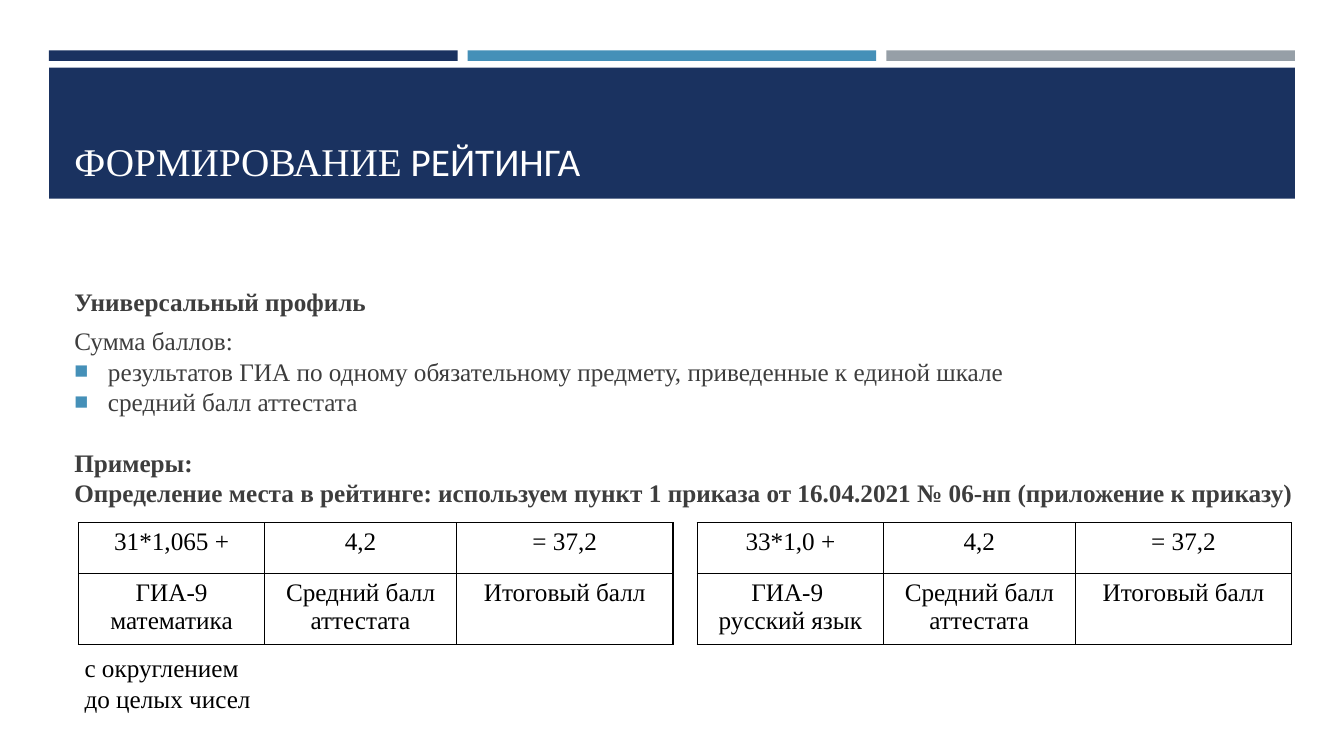
import pptx
import pptx.util
import pptx.dml.color
import pptx.enum.shapes
import pptx.enum.text
import lxml.etree

Pt = pptx.util.Pt
RGB = pptx.dml.color.RGBColor
Align = pptx.enum.text.PP_ALIGN
Anchor = pptx.enum.text.MSO_ANCHOR

NAVY = RGB(0x1A, 0x32, 0x60)
BLUE = RGB(0x45, 0x90, 0xB8)
GRAY = RGB(0x96, 0x9F, 0xA7)
DARK = RGB(0x3D, 0x3D, 0x3D)
BLACK = RGB(0, 0, 0)
WHITE = RGB(0xFF, 0xFF, 0xFF)
SERIF = "Times New Roman"


def add_node(parent, tag, **attrs):
    node = lxml.etree.SubElement(parent, pptx.oxml.ns.qn(tag))
    for key, value in attrs.items():
        node.set(key, str(value))
    return node


def write(para, text, size=18, font=SERIF, color=BLACK, bold=False,
          align=Align.LEFT, line=None, before=0, after=0):
    """Add a formatted run to a paragraph and set the paragraph's layout."""
    run = para.add_run()
    run.text = text
    run.font.size = Pt(size)
    run.font.name = font
    run.font.color.rgb = color
    run.font.bold = bold
    para.alignment = align
    para.space_before, para.space_after = Pt(before), Pt(after)
    if line:
        para.line_spacing = Pt(line)


def set_bullet(para):
    props = para._p.get_or_add_pPr()
    props.set("marL", str(Pt(24)))
    props.set("indent", str(-Pt(24)))
    add_node(add_node(props, "a:buClr"), "a:srgbClr", val=BLUE)
    add_node(props, "a:buSzPct", val=92000)
    add_node(props, "a:buFont", typeface="Arial")
    add_node(props, "a:buChar", char="■")


def add_block(slide, x, y, w, h, fill):
    block = slide.shapes.add_shape(
        pptx.enum.shapes.MSO_SHAPE.RECTANGLE, Pt(x), Pt(y), Pt(w), Pt(h))
    block.shadow.inherit = False
    block.fill.solid()
    block.fill.fore_color.rgb = fill
    block.line.fill.background()


def add_header(slide, x, y, w):
    gap = 7.2
    bar = (w - 2 * gap) / 3
    for i, fill in enumerate((NAVY, BLUE, GRAY)):
        add_block(slide, x + i * (bar + gap), y, bar, 7.5, fill)
    add_block(slide, x, y + 12.3, w, 93.6, NAVY)

    title = slide.shapes.title
    title.left, title.top = Pt(x + 11), Pt(y + 19.4)
    title.width, title.height = Pt(w - 22), Pt(80)
    frame = title.text_frame
    frame.auto_size = pptx.enum.text.MSO_AUTO_SIZE.NONE
    frame.vertical_anchor = Anchor.BOTTOM
    para = frame.paragraphs[0]
    write(para, "ФОРМИРОВАНИЕ", size=28, color=WHITE)
    write(para, " РЕЙТИНГА", size=28, font="Calibri", color=WHITE)
    # Bring the title in front of the band
    title.element.getparent().append(title.element)


def add_frame(slide, x, y, w, h):
    box = slide.shapes.add_textbox(Pt(x), Pt(y), Pt(w), Pt(h))
    box.text_frame.word_wrap = True
    return box.text_frame


def add_body(slide, x, y, w, h):
    line = 21.7
    frame = add_frame(slide, x, y, w, h)
    frame.vertical_anchor = Anchor.MIDDLE
    frame.margin_bottom = Pt(3.6 + line)
    rows = [
        ("Универсальный профиль", False, dict(bold=True, after=6)),
        ("Сумма баллов:", False, {}),
        ("результатов ГИА по одному обязательному предмету, "
         "приведенные к единой шкале", True, {}),
        ("средний балл аттестата", True, {}),
        ("Примеры:", False, dict(bold=True, before=line)),
        ("Определение места в рейтинге: используем пункт 1 приказа "
         "от 16.04.2021 № 06-нп (приложение к приказу)", False,
         dict(bold=True)),
    ]
    for i, (text, listed, style) in enumerate(rows):
        para = frame.add_paragraph() if i else frame.paragraphs[0]
        write(para, text, color=DARK, line=line, **style)
        if listed:
            set_bullet(para)


def set_border(cell):
    props = cell._tc.get_or_add_tcPr()
    for i, side in enumerate(("a:lnL", "a:lnR", "a:lnT", "a:lnB")):
        edge = add_node(props, side, w=Pt(1))
        add_node(add_node(edge, "a:solidFill"), "a:srgbClr", val=BLACK)
        props.insert(i, edge)


def add_score(slide, x, y, rows):
    """Draw one worked example: values over their labels."""
    widths, heights = (133.2, 136.8, 154.8), (36.4, 47)
    table = slide.shapes.add_table(
        2, 3, Pt(x), Pt(y), Pt(sum(widths)), Pt(sum(heights))).table
    table.first_row = table.horz_banding = False
    for col, width in zip(table.columns, widths):
        col.width = Pt(width)
    for row, height, texts in zip(table.rows, heights, rows):
        row.height = Pt(height)
        for cell, text in zip(row.cells, texts):
            cell.fill.background()
            set_border(cell)
            for i, part in enumerate(text.split("\n")):
                frame = cell.text_frame
                para = frame.add_paragraph() if i else frame.paragraphs[0]
                write(para, part, align=Align.CENTER)


def add_note(slide, x, y, w, h):
    frame = add_frame(slide, x, y, w, h)
    write(frame.paragraphs[0], "с округлением до целых чисел", line=22)


def main():
    deck = pptx.Presentation()
    deck.slide_width, deck.slide_height = Pt(960), Pt(540)
    slide = deck.slides.add_slide(deck.slide_layouts[5])
    add_header(slide, 35, 36, 890)
    add_body(slide, 46, 164.2, 890, 260.6)
    scores = [("31*1,065 +", "ГИА-9 математика"),
              ("33*1,0 +", "ГИА-9 \nрусский язык")]
    for i, (value, label) in enumerate(scores):
        add_score(slide, 56 + i * 442, 373.5, [
            (value, "4,2", "= 37,2"),
            (label, "Средний балл аттестата", "Итоговый балл")])
    add_note(slide, 53.3, 462.2, 138.2, 51)
    deck.save("out.pptx")


if __name__ == "__main__":
    main()
